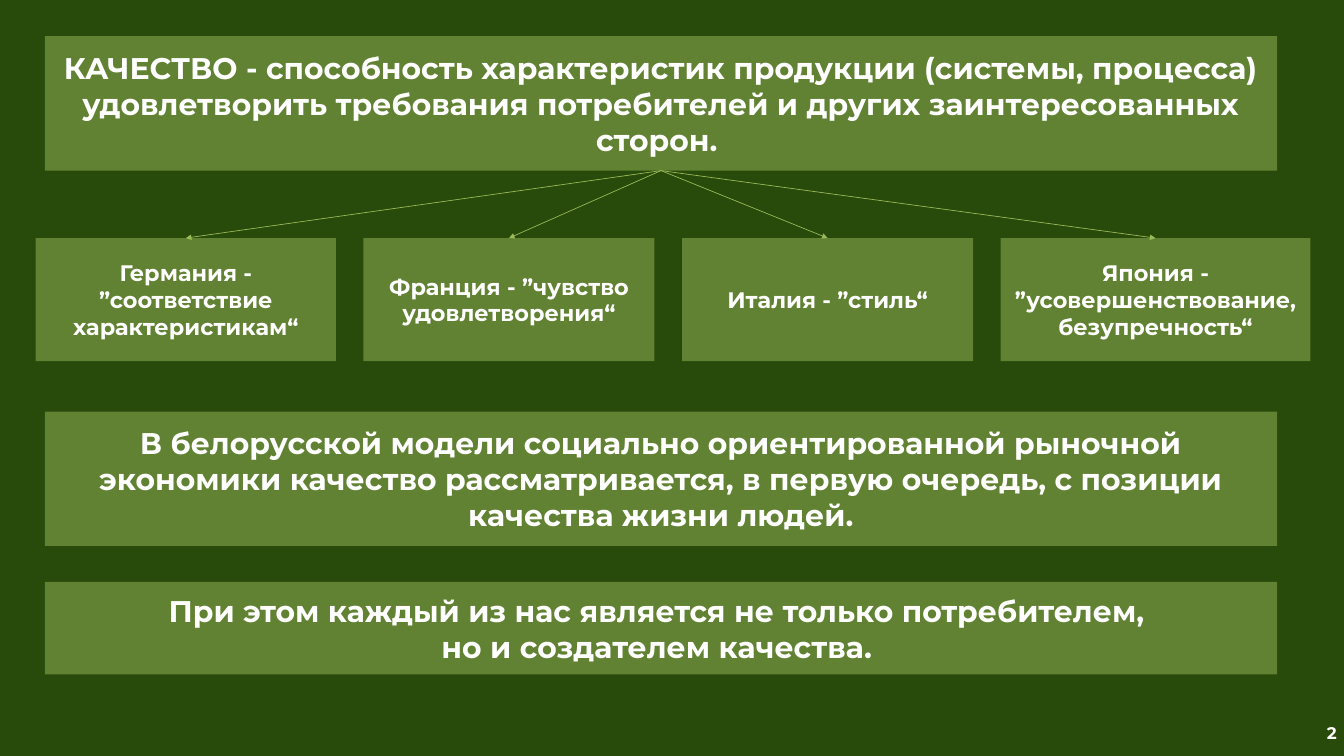
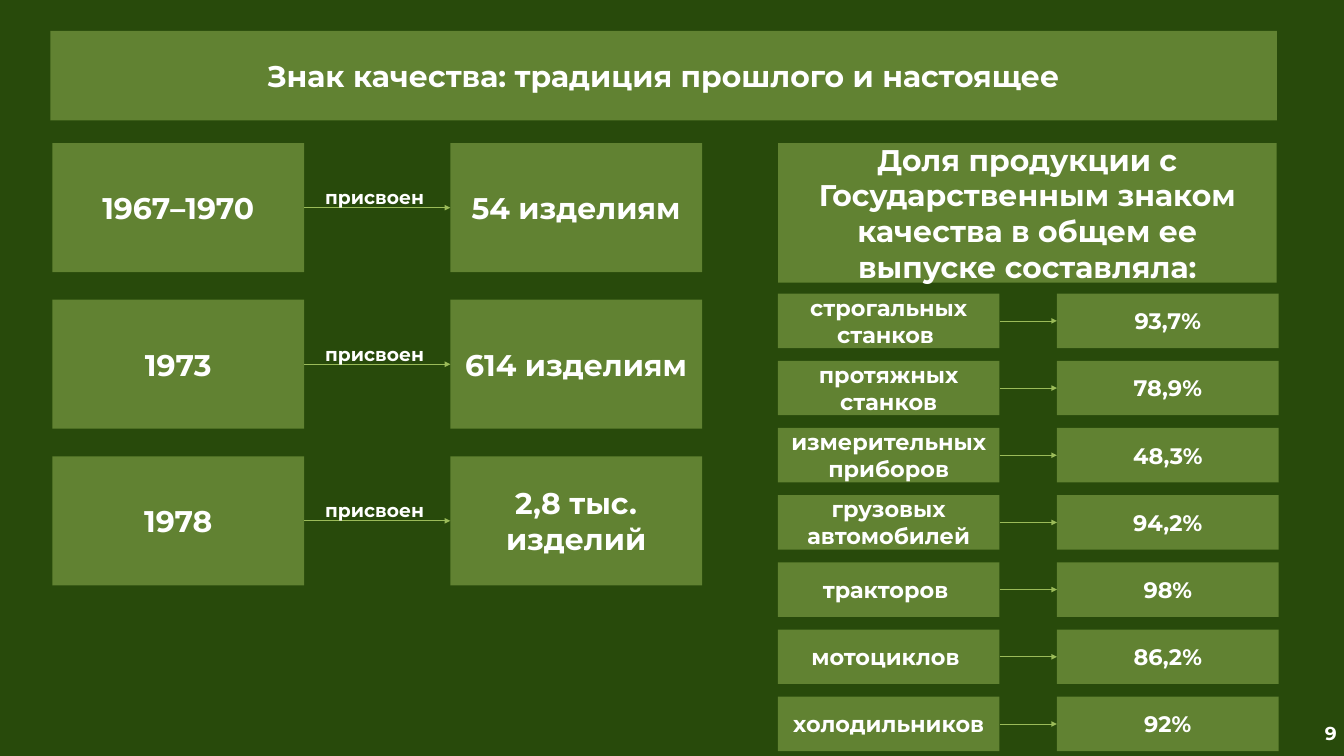
from dataclasses import dataclass

from pptx import Presentation
from pptx.dml.color import RGBColor
from pptx.enum.shapes import MSO_CONNECTOR, MSO_SHAPE
from pptx.enum.text import MSO_ANCHOR, MSO_AUTO_SIZE, PP_ALIGN
from pptx.oxml.ns import qn
from pptx.util import Cm, Pt
from lxml import etree

RECT = MSO_SHAPE.RECTANGLE
STRAIGHT = MSO_CONNECTOR.STRAIGHT
MIDDLE, TOP_ANCHOR = MSO_ANCHOR.MIDDLE, MSO_ANCHOR.TOP
CENTER, RIGHT_ALIGN = PP_ALIGN.CENTER, PP_ALIGN.RIGHT
NO_FIT = MSO_AUTO_SIZE.NONE
TOP, LEFT, BOTTOM, RIGHT = range(4)
TITLE_ONLY = 5


@dataclass(frozen=True)
class Theme:
    background: RGBColor = RGBColor.from_string("284A0B")
    accent: RGBColor = RGBColor.from_string("9BBB59")
    text: RGBColor = RGBColor.from_string("FFFFFF")
    font: str = "Montserrat"
    panel_alpha: int = 50000
    line: float = 0.75
    large: int = 32
    medium: int = 24
    label: int = 20
    number: int = 18


THEME = Theme()

COUNTRIES = [
    ("Германия - ”соответствие характеристикам“", 11.35),
    ("Франция - ”чувство удовлетворения“", 11),
    ("Италия - ”стиль“", 11),
    ("Япония - ”усовершенствование, безупречность“", 11.71),
]
AWARDS = [
    ("1967–1970", "54 изделиям"),
    ("1973", "614 изделиям"),
    ("1978", "2,8 тыс. изделий"),
]
SHARES = [
    ("строгальных станков ", "93,7%"),
    ("протяжных станков", "78,9%"),
    ("измерительных приборов", "48,3%"),
    ("грузовых автомобилей", "94,2%"),
    ("тракторов ", "98%"),
    ("мотоциклов ", "86,2%"),
    ("холодильников", "92%"),
]


def write(shape, text, size=THEME.large, align=CENTER, anchor=MIDDLE):
    tf = shape.text_frame
    tf.word_wrap = True
    tf.auto_size = NO_FIT
    tf.vertical_anchor = anchor
    p = tf.paragraphs[0]
    p.text = text
    p.alignment = align
    for r in p.runs:
        r.font.name = THEME.font
        r.font.size = Pt(size)
        r.font.bold = True
        r.font.color.rgb = THEME.text


def style_panel(shape):
    shape.fill.solid()
    shape.fill.fore_color.rgb = THEME.accent
    color = shape.element.spPr.find(qn("a:solidFill")).find(qn("a:srgbClr"))
    etree.SubElement(color, qn("a:alpha"), val=str(THEME.panel_alpha))
    shape.line.fill.background()


def add_panel(slide, text, left, top, width, height, **fmt):
    sp = slide.shapes.add_shape(RECT, Cm(left), Cm(top), Cm(width), Cm(height))
    sp.shadow.inherit = False
    style_panel(sp)
    write(sp, text, **fmt)
    return sp


def add_text(slide, text, left, top, width, height, **fmt):
    sp = slide.shapes.add_textbox(Cm(left), Cm(top), Cm(width), Cm(height))
    write(sp, text, **fmt)


def add_arrow(slide, start, start_side, end, end_side):
    cxn = slide.shapes.add_connector(STRAIGHT, 0, 0, 0, 0)
    cxn.begin_connect(start, start_side)
    cxn.end_connect(end, end_side)
    cxn.line.color.rgb = THEME.accent
    cxn.line.width = Pt(THEME.line)
    sp_pr = cxn.element.spPr
    etree.SubElement(sp_pr.find(qn("a:ln")), qn("a:tailEnd"), type="triangle")
    etree.SubElement(sp_pr, qn("a:effectLst"))


def add_slide(prs, title, left, top, width, height):
    slide = prs.slides.add_slide(prs.slide_layouts[TITLE_ONLY])
    sp = slide.shapes.title
    sp.left, sp.top, sp.width, sp.height = Cm(left), Cm(top), Cm(width), Cm(height)
    style_panel(sp)
    write(sp, title)
    return slide


def add_number(slide, number, size):
    add_text(slide, number, 44.86, 27.2, 5.92, 1.02, size=size, align=RIGHT_ALIGN)


def add_pair(slide, texts, lefts, top, width, height, **fmt):
    source, target = [
        add_panel(slide, text, left, top, width, height, **fmt)
        for text, left in zip(texts, lefts)
    ]
    add_arrow(slide, source, RIGHT, target, LEFT)


def build_definition(prs):
    left, width = 1.7, 46.57
    slide = add_slide(
        prs,
        "КАЧЕСТВО - способность характеристик продукции (системы, процесса) "
        "удовлетворить требования потребителей и других заинтересованных сторон. ",
        left, 1.37, width, 5.08,
    )
    country_left, gap = 1.35, 1.04
    for text, country_width in COUNTRIES:
        country = add_panel(slide, text, country_left, 9, country_width, 4.65,
                            size=THEME.medium)
        add_arrow(slide, slide.shapes.title, BOTTOM, country, TOP)
        country_left += country_width + gap
    add_panel(
        slide,
        "В белорусской модели социально ориентированной рыночной экономики качество "
        "рассматривается, в первую очередь, с позиции качества жизни людей.",
        left, 15.56, width, 5.08,
    )
    add_panel(
        slide,
        "При этом каждый из нас является не только потребителем, \n"
        "но и создателем качества. ",
        left, 22, width, 3.5,
    )
    add_number(slide, "2", THEME.number)


def build_quality_mark(prs):
    slide = add_slide(prs, "Знак качества: традиция прошлого и настоящее",
                      1.9, 1.17, 46.36, 3.38)
    first_top = 5.41
    for i, texts in enumerate(AWARDS):
        top = first_top + i * 5.92
        add_pair(slide, texts, (1.98, 17.02), top, 9.52, 4.88)
        add_text(slide, "присвоен", 11.94, top + 1.5, 4.44, 1.09,
                 size=THEME.label, anchor=TOP_ANCHOR)
    add_panel(
        slide,
        "Доля продукции с Государственным знаком качества в общем ее выпуске составляла:",
        29.41, first_top, 18.85, 5.28,
    )
    for i, texts in enumerate(SHARES):
        add_pair(slide, texts, (29.4, 39.95), 11.1 + i * 2.54, 8.38, 2.06,
                 size=THEME.medium)
    add_number(slide, "9", THEME.label)


def main():
    prs = Presentation()
    prs.slide_width, prs.slide_height = Cm(50.8), Cm(28.58)
    fill = prs.slide_master.background.fill
    fill.solid()
    fill.fore_color.rgb = THEME.background
    build_definition(prs)
    build_quality_mark(prs)
    prs.save("out.pptx")


if __name__ == "__main__":
    main()
